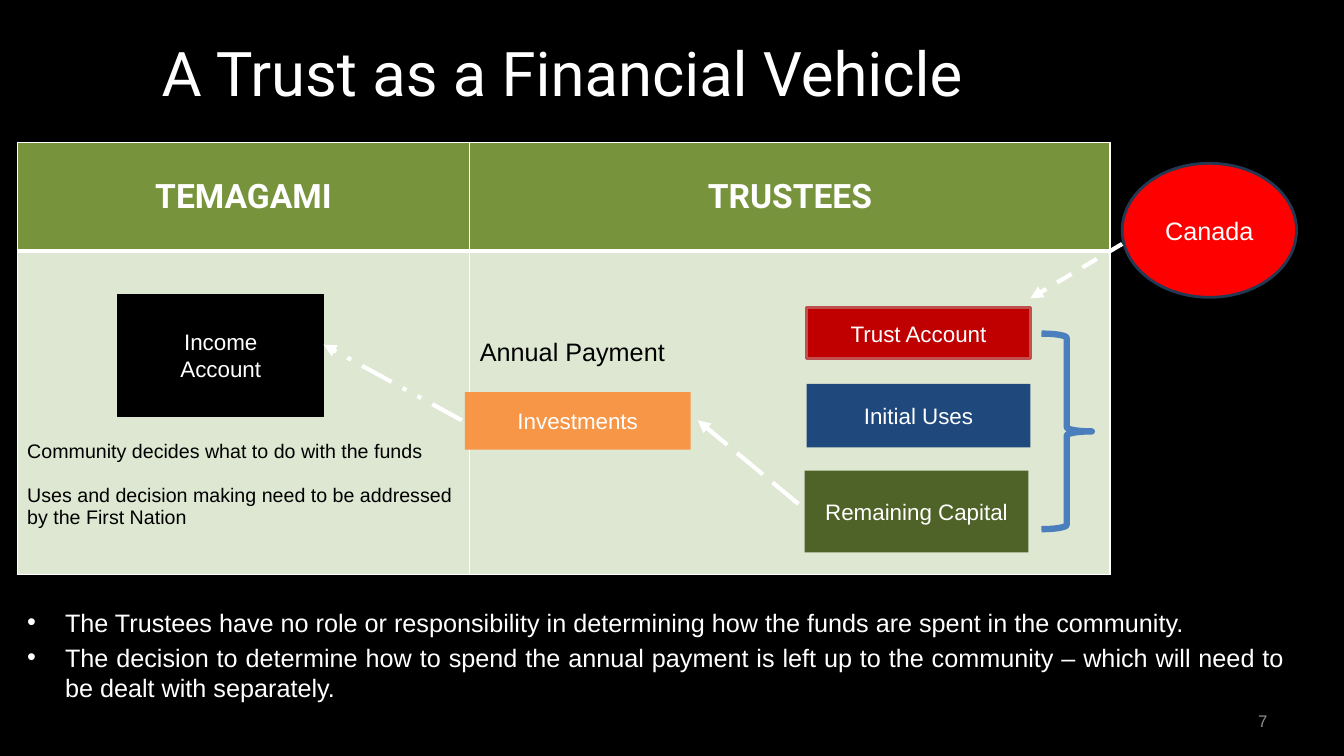
from lxml import etree
from pptx import Presentation
from pptx.dml.color import RGBColor
from pptx.enum.dml import MSO_LINE
from pptx.enum.shapes import MSO_CONNECTOR, MSO_SHAPE
from pptx.enum.text import MSO_ANCHOR, MSO_AUTO_SIZE, PP_ALIGN
from pptx.oxml.ns import qn
from pptx.util import Inches, Pt

WHITE = RGBColor(0xFF, 0xFF, 0xFF)
BLACK = RGBColor(0x00, 0x00, 0x00)
GREY = RGBColor(0x8C, 0x8C, 0x8C)
HEADER_GREEN = RGBColor(0x77, 0x93, 0x3C)
PALE_GREEN = RGBColor(0xDE, 0xE7, 0xD1)
DARK_GREEN = RGBColor(0x4F, 0x62, 0x28)
DARK_RED = RGBColor(0xC0, 0x00, 0x00)
SOFT_RED = RGBColor(0xC0, 0x50, 0x4D)
RED = RGBColor(0xFF, 0x00, 0x00)
NAVY = RGBColor(0x1F, 0x49, 0x7D)
DARK_NAVY = RGBColor(0x23, 0x39, 0x53)
ORANGE = RGBColor(0xF7, 0x96, 0x46)
BRACE_BLUE = RGBColor(0x4B, 0x7E, 0xBC)

CENTER, RIGHT, JUSTIFY = PP_ALIGN.CENTER, PP_ALIGN.RIGHT, PP_ALIGN.JUSTIFY
TOP, MIDDLE = MSO_ANCHOR.TOP, MSO_ANCHOR.MIDDLE
RECTANGLE, OVAL, RIGHT_BRACE = MSO_SHAPE.RECTANGLE, MSO_SHAPE.OVAL, MSO_SHAPE.RIGHT_BRACE
DASH, LONG_DASH = MSO_LINE.DASH, MSO_LINE.LONG_DASH
DASH_DOT_DOT = MSO_LINE.DASH_DOT_DOT
STRAIGHT = MSO_CONNECTOR.STRAIGHT
NO_AUTO_SIZE = MSO_AUTO_SIZE.NONE

ACCOUNTS = [
    ("Trust Account", RECTANGLE, (7.83, 1.64, 2.22, 0.51), DARK_RED, SOFT_RED, 2, 16),
    ("Initial Uses", RECTANGLE, (7.83, 2.4, 2.22, 0.63), NAVY, None, 0, 16),
    ("Remaining Capital", RECTANGLE, (7.81, 3.26, 2.22, 0.81), DARK_GREEN, None, 0, 16),
    ("Investments", RECTANGLE, (4.44, 2.48, 2.24, 0.57), ORANGE, None, 0, 16),
    ("Income\nAccount", RECTANGLE, (1, 1.51, 2.04, 1.21), BLACK, BLACK, 0.75, 16),
    ("Canada", OVAL, (10.96, 0.21, 1.73, 1.33), RED, DARK_NAVY, 2, 18),
]
PAYMENTS = [
    ((10.96, 1.01), (10.05, 1.55), DASH),
    ((7.75, 3.59), (6.75, 2.76), LONG_DASH),
    ((4.41, 2.76), (3.04, 2.01), DASH_DOT_DOT),
]
COLUMNS = [
    ("TEMAGAMI", 4.49, 1.88,
     "Community decides what to do with the funds\n"
     "Uses and decision making need to be addressed by the First Nation", 14),
    ("TRUSTEES", 6.35, 0.87, "Annual Payment", 18),
]
NOTES = [
    "The Trustees have no role or responsibility in determining how the funds "
    "are spent in the community.",
    "The decision to determine how to spend the annual payment is left up to the "
    "community – which will need to be dealt with separately.",
]


def place(shape, box):
    shape.left, shape.top, shape.width, shape.height = map(Inches, box)


def write(frame, text, size, color, align=None, font="Arial", bold=False):
    frame.text = text
    for para in frame.paragraphs:
        if align is not None:
            para.alignment = align
        for span in para.runs:
            span.font.name = font
            span.font.size = Pt(size)
            span.font.bold = bold
            span.font.color.rgb = color


def add_border(cell, sides):
    properties = cell._tc.get_or_add_tcPr()
    for position, (side, width) in enumerate(sides):
        line = etree.Element(qn(f"a:{side}"), w=str(Pt(width)))
        fill = etree.SubElement(line, qn("a:solidFill"))
        etree.SubElement(fill, qn("a:srgbClr"), val=str(WHITE))
        properties.insert(position, line)


def add_title(slide, box):
    title = slide.shapes.title
    place(title, box)
    title.text_frame.vertical_anchor = MIDDLE
    write(title.text_frame, "A Trust as a Financial Vehicle", 44, WHITE, CENTER, "Roboto")


def add_roles_table(slide, box):
    table = slide.shapes.add_table(2, len(COLUMNS), *map(Inches, box)).table
    table.horz_banding = False
    table.rows[0].height = Inches(1.08)
    table.rows[1].height = Inches(box[3] - 1.08)
    for index, (heading, width, text_top, text, size) in enumerate(COLUMNS):
        table.columns[index].width = Inches(width)
        header, body = table.cell(0, index), table.cell(1, index)
        for cell, color in ((header, HEADER_GREEN), (body, PALE_GREEN)):
            cell.fill.solid()
            cell.fill.fore_color.rgb = color
        add_border(header, [("lnL", 1), ("lnR", 1), ("lnT", 1), ("lnB", 3)])
        add_border(body, [("lnL", 1), ("lnR", 1), ("lnT", 3), ("lnB", 1)])
        header.vertical_anchor = MIDDLE
        write(header.text_frame, heading, 24, WHITE, CENTER, "Roboto", True)
        body.vertical_anchor = TOP
        body.margin_top = Inches(text_top)
        write(body.text_frame, text, size, BLACK)
        for para in body.text_frame.paragraphs[1:]:
            para.space_before = Pt(16)


def add_account(slide, box, text, kind, fill, line, line_width, size):
    account = slide.shapes.add_shape(kind, *map(Inches, box))
    account.shadow.inherit = False
    account.fill.solid()
    account.fill.fore_color.rgb = fill
    if line is None:
        account.line.fill.background()
    else:
        account.line.color.rgb = line
        account.line.width = Pt(line_width)
    account.text_frame.word_wrap = True
    account.text_frame.vertical_anchor = MIDDLE
    write(account.text_frame, text, size, WHITE, CENTER)


def add_payment(slide, start, end, dash):
    arrow = slide.shapes.add_connector(STRAIGHT, *map(Inches, start + end))
    arrow.line.color.rgb = WHITE
    arrow.line.width = Pt(3)
    arrow.line.dash_style = dash
    etree.SubElement(arrow.line._get_or_add_ln(), qn("a:tailEnd"), type="triangle")
    etree.SubElement(arrow._element.spPr, qn("a:effectLst"))


def add_money_flow(slide, box):
    left, top = box[:2]
    for text, kind, (x, y, width, height), fill, line, line_width, size in ACCOUNTS:
        add_account(slide, (left + x, top + y, width, height),
                    text, kind, fill, line, line_width, size)
    brace = slide.shapes.add_shape(
        RIGHT_BRACE, *map(Inches, (left + 10.16, top + 1.9, 0.5, 1.94)))
    brace.shadow.inherit = False
    brace.fill.background()
    brace.line.color.rgb = BRACE_BLUE
    brace.line.width = Pt(4.5)
    for start, end, dash in PAYMENTS:
        add_payment(slide, (left + start[0], top + start[1]),
                    (left + end[0], top + end[1]), dash)


def add_notes_list(slide, box):
    body = slide.placeholders[1]
    place(body, box)
    body.text_frame.auto_size = NO_AUTO_SIZE
    body.text_frame.vertical_anchor = TOP
    write(body.text_frame, "\n".join(NOTES), 18, WHITE, JUSTIFY)


def add_page_number(slide, box):
    number = slide.shapes.add_textbox(*map(Inches, box))
    number.text_frame.word_wrap = True
    number.text_frame.vertical_anchor = MIDDLE
    write(number.text_frame, "7", 12, GREY, RIGHT)


def main():
    deck = Presentation()
    deck.slide_width, deck.slide_height = Inches(13.33), Inches(7.5)
    slide = deck.slides.add_slide(deck.slide_layouts[1])
    slide.background.fill.solid()
    slide.background.fill.fore_color.rgb = BLACK
    roles_box = (0.17, 1.41, 10.84, 4.29)
    add_title(slide, (1.08, 0.09, 9, 1.25))
    add_roles_table(slide, roles_box)
    add_money_flow(slide, roles_box)
    add_notes_list(slide, (0.17, 5.97, 12.67, 1.3))
    add_page_number(slide, (9.56, 6.95, 3.11, 0.4))
    deck.save("out.pptx")


if __name__ == "__main__":
    main()
